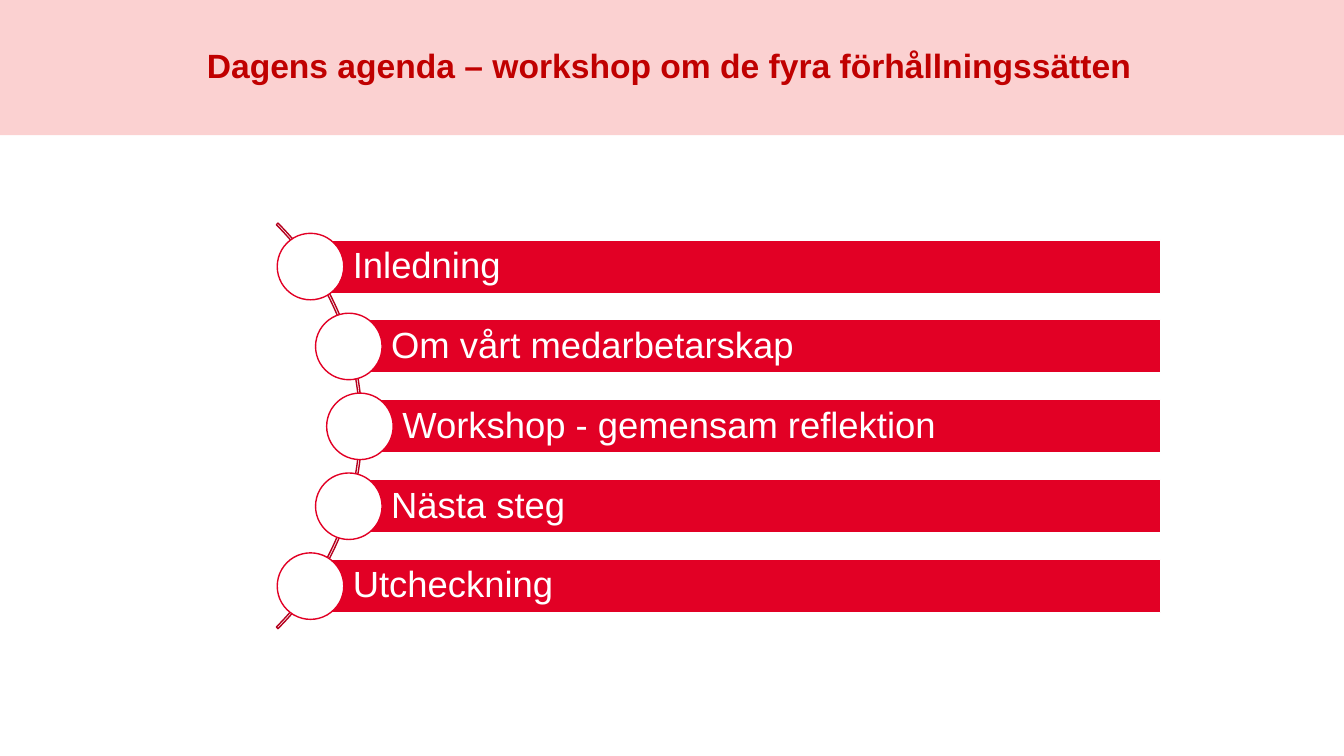
from pptx import Presentation
from pptx.dml.color import RGBColor
from pptx.enum.shapes import MSO_SHAPE
from pptx.enum.text import MSO_ANCHOR, PP_ALIGN
from pptx.util import Inches, Pt

RECT, OVAL, ARC = MSO_SHAPE.RECTANGLE, MSO_SHAPE.OVAL, MSO_SHAPE.BLOCK_ARC
MIDDLE = MSO_ANCHOR.MIDDLE
LEFT, CENTER = PP_ALIGN.LEFT, PP_ALIGN.CENTER

COLORS = {"banner": "FBD1D1", "title": "C00000", "red": "E20025",
          "arc": "B5001E", "white": "FFFFFF"}

prs = Presentation()
prs.slide_width, prs.slide_height = Inches(13.33), Inches(7.5)
slide = prs.slides.add_slide(prs.slide_layouts[6])


def add_block(kind, left, top, width, height, fill=None, line=None):
    block = slide.shapes.add_shape(
        kind, Inches(left), Inches(top), Inches(width), Inches(height))
    block.shadow.inherit = False
    if fill:
        block.fill.solid()
        block.fill.fore_color.rgb = RGBColor.from_string(COLORS[fill])
    else:
        block.fill.background()
    if line:
        block.line.color.rgb = RGBColor.from_string(COLORS[line])
        block.line.width = Pt(1)
    else:
        block.line.fill.background()
    return block


def write(block, text, size, color, align, insets, bold=False):
    frame = block.text_frame
    frame.word_wrap = True
    frame.vertical_anchor = MIDDLE
    (frame.margin_left, frame.margin_top,
     frame.margin_right, frame.margin_bottom) = map(Inches, insets)
    paragraph = frame.paragraphs[0]
    paragraph.text = text
    paragraph.alignment = align
    paragraph.line_spacing = 0.9
    paragraph.font.name = "Arial"
    paragraph.font.size = Pt(size)
    paragraph.font.bold = bold
    paragraph.font.color.rgb = RGBColor.from_string(COLORS[color])


# Title banner
banner = add_block(RECT, 0, 0, 13.33, 1.34, fill="banner")
write(banner, "Dagens agenda – workshop om de fyra förhållningssätten",
      24, "title", CENTER, (0.04, 0.05, 0.1, 0.05), bold=True)

# Curve behind the agenda
curve = add_block(ARC, -2.1, 1.38, 5.69, 5.69, line="arc")
for index, value in enumerate((189, 27, 0.004)):
    curve.adjustments[index] = value

# Agenda bars, each with a circle centred on its left edge
AGENDA = [
    ("Inledning", 3.08),
    ("Om vårt medarbetarskap", 3.46),
    ("Workshop - gemensam reflektion", 3.57),
    ("Nästa steg", 3.46),
    ("Utcheckning", 3.08),
]
FIRST_TOP, LAST_TOP = 2.38, 5.55
BAR_RIGHT, BAR_HEIGHT, CIRCLE = 11.51, 0.53, 0.66
pitch = (LAST_TOP - FIRST_TOP) / (len(AGENDA) - 1)

for row, (topic, left) in enumerate(AGENDA):
    top = FIRST_TOP + row * pitch
    bar = add_block(RECT, left, top, BAR_RIGHT - left, BAR_HEIGHT,
                    fill="red", line="white")
    write(bar, topic, 26, "white", LEFT, (0.42, 0.07, 0.07, 0.07))
    add_block(OVAL, left - CIRCLE / 2, top + (BAR_HEIGHT - CIRCLE) / 2,
              CIRCLE, CIRCLE, fill="white", line="red")

prs.save("out.pptx")
